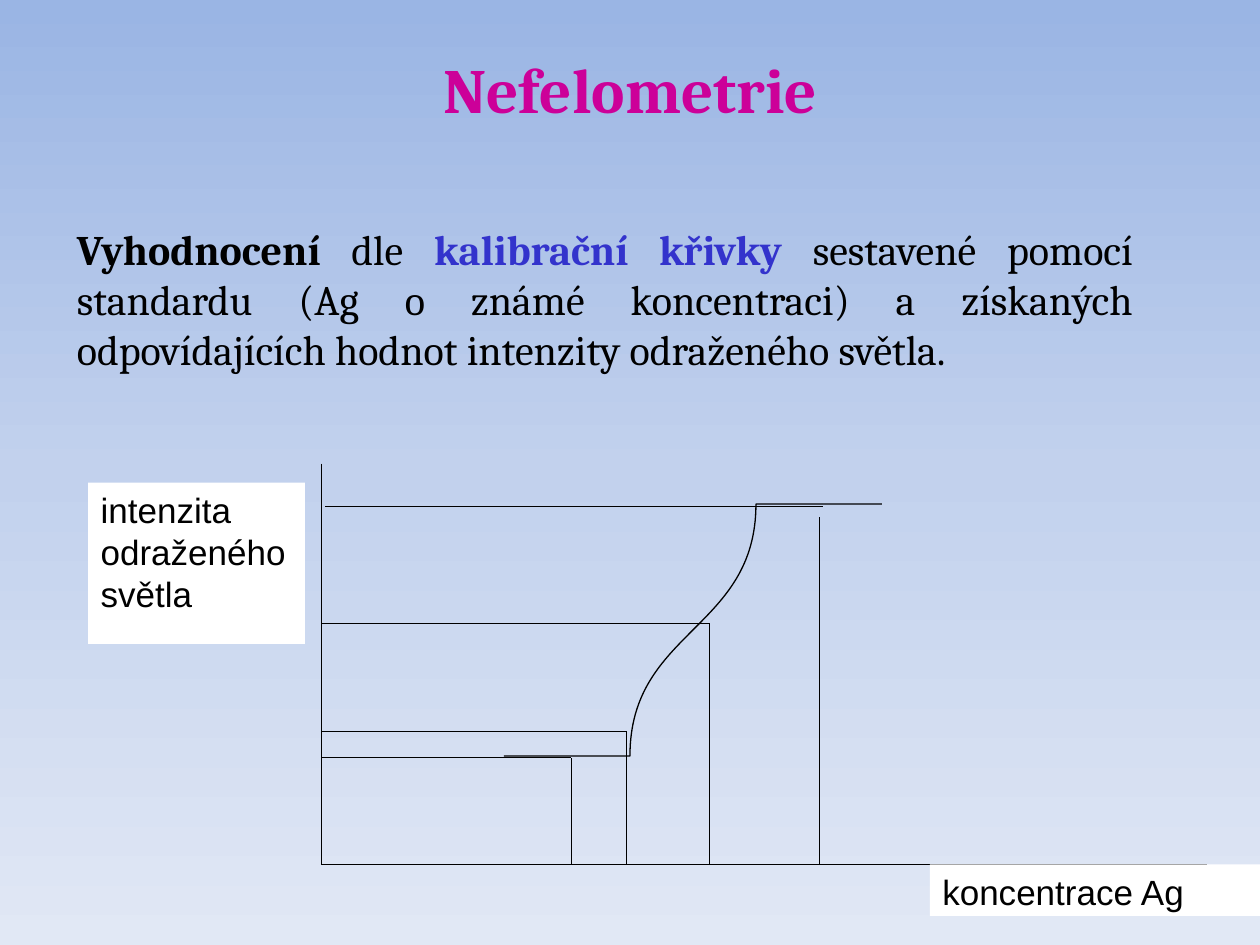
from copy import deepcopy

from lxml import etree
from pptx import Presentation
from pptx.dml.color import RGBColor
from pptx.enum.dml import MSO_LINE
from pptx.enum.shapes import MSO_CONNECTOR, MSO_SHAPE
from pptx.enum.text import MSO_ANCHOR, PP_ALIGN
from pptx.oxml.ns import qn
from pptx.util import Inches, Pt

BLACK = RGBColor(0x00, 0x00, 0x00)
WHITE = RGBColor(0xFF, 0xFF, 0xFF)
MAGENTA = RGBColor(0xCC, 0x00, 0x99)
BLUE = RGBColor(0x33, 0x33, 0xCC)
SKY = [(0, RGBColor(0x9A, 0xB5, 0xE4)),
       (0.5, RGBColor(0xC2, 0xD1, 0xED)),
       (1, RGBColor(0xE1, 0xE8, 0xF5))]

AXIS_X, AXIS_Y = 2.55, 6.86  # origin of the graph
# Each standard: x and top of its vertical, then y, left and right of its horizontal
STANDARDS = [
    (4.53, 6.01, 6.01, AXIS_X, 4.53),
    (4.97, 5.8, 5.8, AXIS_X, 4.97),
    (5.63, 4.95, 4.95, AXIS_X, 5.63),
    (6.5, 4.1, 4.02, 2.58, 6.53),
]
# Start point, then two control points and an end point per Bézier segment
CURVE = [
    (3.87, 6.22),
    (4.12, 6.17), (4.38, 6.12), (4.57, 6.03),
    (4.77, 5.93), (4.77, 5.93), (5.04, 5.64),
    (5.32, 5.35), (5.87, 4.57), (6.22, 4.28),
    (6.57, 3.99), (7.01, 3.95), (7.16, 3.89),
]


def set_background(s):
    fill = s.background.fill
    fill.gradient()
    fill.gradient_angle = 270
    first = fill._fill._gradFill.find(qn("a:gsLst"))[0]
    first.addnext(deepcopy(first))
    for stop, (position, color) in zip(fill.gradient_stops, SKY):
        stop.position = position
        stop.color.rgb = color


def place(sp, left, top, width, height):
    sp.left, sp.top = Inches(left), Inches(top)
    sp.width, sp.height = Inches(width), Inches(height)


def style_font(font, name, size, color):
    font.name, font.size = name, Pt(size)
    font.color.rgb = color


def add_title(s, text):
    sp = s.shapes.title
    place(sp, 0, 0.16, 10, 1.09)
    tf = sp.text_frame
    tf.vertical_anchor = MSO_ANCHOR.MIDDLE
    p = tf.paragraphs[0]
    p.text = text
    p.alignment = PP_ALIGN.CENTER
    style_font(p.font, "Cambria", 36, MAGENTA)
    p.font.bold = True


def add_body(s, runs):
    sp = s.placeholders[1]
    place(sp, 0.51, 1.72, 8.58, 1.41)
    p = sp.text_frame.paragraphs[0]
    p.alignment = PP_ALIGN.JUSTIFY
    style_font(p.font, "Cambria", 24, BLACK)
    for text, bold, color in runs:
        r = p.add_run()
        r.text = text
        r.font.bold = bold
        r.font.color.rgb = color


def add_line(s, x1, y1, x2, y2, width=0.75, dash=None):
    line = s.shapes.add_connector(MSO_CONNECTOR.STRAIGHT, Inches(x1), Inches(y1),
                                  Inches(x2), Inches(y2))
    line.line.color.rgb = BLACK
    line.line.width = Pt(width)
    if dash:
        line.line.dash_style = dash
    etree.SubElement(line._element.spPr, qn("a:effectLst"))


def add_label(s, text, *box):
    sp = s.shapes.add_shape(MSO_SHAPE.RECTANGLE, *map(Inches, box))
    sp.shadow.inherit = False
    sp.fill.solid()
    sp.fill.fore_color.rgb = WHITE
    sp.line.fill.background()
    tf = sp.text_frame
    tf.word_wrap = True
    tf.vertical_anchor = MSO_ANCHOR.TOP
    p = tf.paragraphs[0]
    p.text = text
    p.alignment = PP_ALIGN.LEFT
    style_font(p.font, "Arial", 20, BLACK)


def add_curve(s, points):
    """Draw the control polygon, then merge each three segments into one Bézier."""
    builder = s.shapes.build_freeform(*points[0], scale=Inches(1))
    builder.add_line_segments(points[1:], close=False)
    sp = builder.convert_to_shape()
    sp.shadow.inherit = False
    sp.fill.background()
    sp.line.color.rgb = BLACK
    sp.line.width = Pt(0.75)
    segments = list(sp._element.iter(qn("a:lnTo")))
    for i in range(0, len(segments), 3):
        bezier = etree.Element(qn("a:cubicBezTo"))
        segments[i].addprevious(bezier)
        for segment in segments[i:i + 3]:
            bezier.append(segment[0])
            segment.getparent().remove(segment)


def main():
    prs = Presentation()
    prs.slide_width, prs.slide_height = Inches(10), Inches(7.5)
    s = prs.slides.add_slide(prs.slide_layouts[0])
    set_background(s)
    add_title(s, "Nefelometrie")
    add_body(s, [
        ("Vyhodnocení", True, BLACK),
        (" dle ", False, BLACK),
        ("kalibrační křivky ", True, BLUE),
        ("sestavené pomocí standardu (Ag o známé koncentraci) a získaných "
         "odpovídajících hodnot intenzity odraženého světla.", False, BLACK),
    ])
    add_line(s, AXIS_X, 3.68, AXIS_X, AXIS_Y)
    add_line(s, AXIS_X, AXIS_Y, 9.58, AXIS_Y)
    add_label(s, "intenzita odraženého světla", 0.7, 3.83, 1.72, 1.28)
    add_label(s, "koncentrace Ag", 7.38, AXIS_Y, 2.62, 0.41)
    add_curve(s, CURVE)
    for x, top, y, left, right in STANDARDS:
        add_line(s, x, AXIS_Y, x, top, 0.25, MSO_LINE.ROUND_DOT)
        add_line(s, right, y, left, y, 0.25, MSO_LINE.ROUND_DOT)
    prs.save("out.pptx")


if __name__ == "__main__":
    main()
